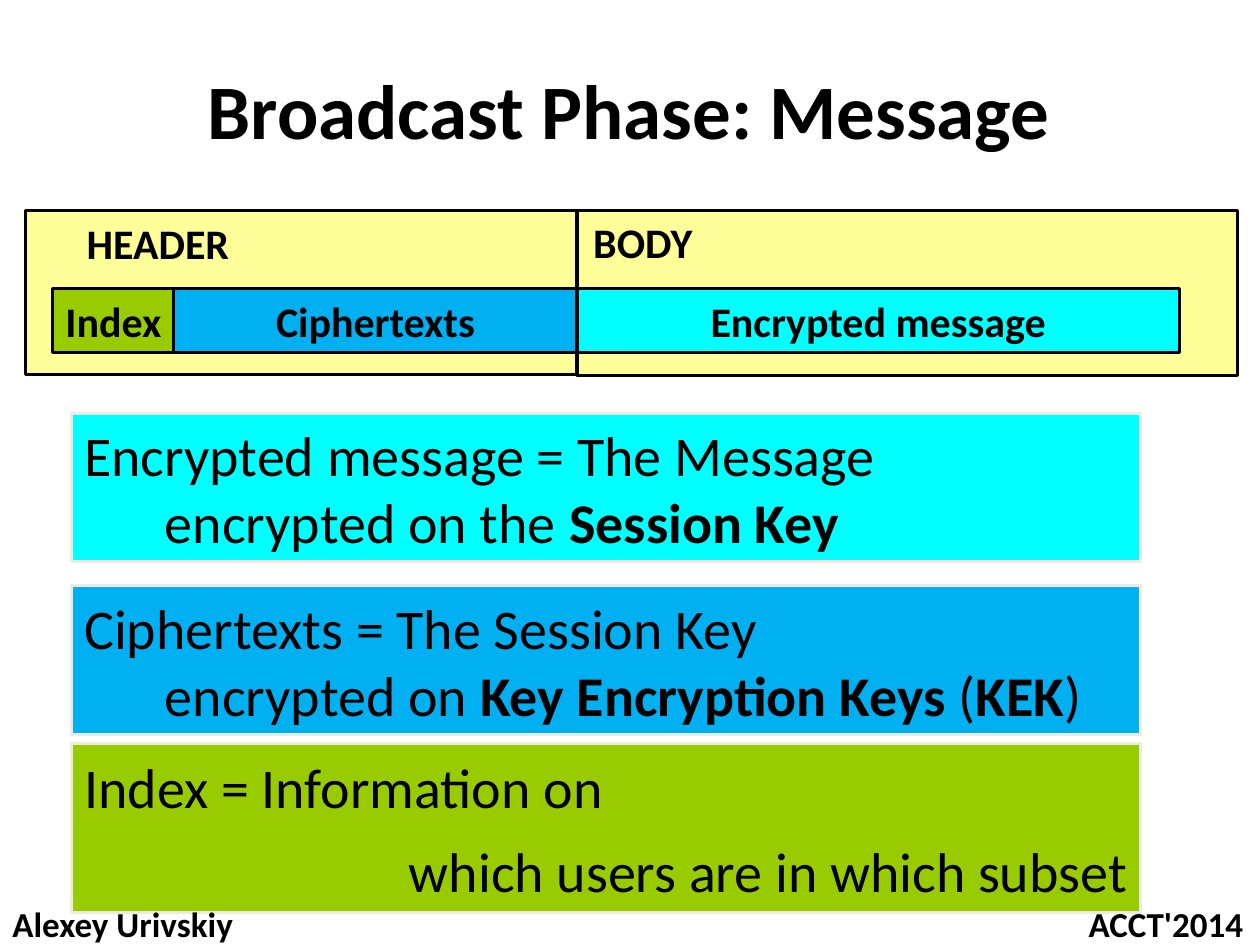
from pptx import Presentation
from pptx.dml.color import RGBColor as Rgb
from pptx.enum.shapes import MSO_SHAPE as Kind
from pptx.enum.text import MSO_ANCHOR as Anchor, MSO_AUTO_SIZE as Fit, PP_ALIGN as Align
from pptx.util import Inches as In, Pt
from lxml.etree import SubElement

HEX = {"ink": "000000", "rim": "EEECE1", "pale": "FFFF99",
       "green": "99CC00", "blue": "00B0F0", "cyan": "00FFFF"}
FONT = "Calibri"
W, H = 10, 7.5

# Content: a paragraph is a list of (text, bold) runs; "\n" breaks the line
TITLE = "Broadcast Phase: Message"
FOOT = "Alexey Urivskiy\tACCT'2014"
NOTES = [  # top, height, fill, paragraphs
    (5.9, 1.34, "green", [[("Index = Information on", False)],
                          [("which users are in which subset", False)]]),
    (4.65, 1.18, "blue", [[("Ciphertexts = The Session Key", False), ("\n", False),
                           ("encrypted on ", False), ("Key Encryption Keys ", True),
                           ("(", False), ("KEK", True), (")", False)]]),
    (3.28, 1.18, "cyan", [[("Encrypted message = The Message", False), ("\n", False),
                           ("encrypted on the ", False), ("Session Key", True)]]),
]
MID = 4.58  # where the header ends and the body starts
FRAMES = [(0.2, MID, 1.3), (MID, 9.82, 1.31)]  # left, right, height
FIELDS = [("Index", 0.42, 1.38, "green"), ("Ciphertexts", 1.38, MID, "blue"),
          ("Encrypted message", MID, 9.36, "cyan")]  # text, left, right, fill
HEADS = [("HEADER", 0.59, 1.68, 1.57), ("BODY", 4.61, 1.67, 1.28)]


def write(shape, paras, size=24, aligns=(Align.LEFT,), anchor=Anchor.TOP,
          wrap=True, hang=0, gap=0, tab=0, grow=True):
    """Fill a shape with paragraphs of (text, bold) runs."""
    frame = shape.text_frame
    frame.word_wrap = wrap
    frame.vertical_anchor = anchor
    frame.auto_size = Fit.SHAPE_TO_FIT_TEXT if grow else Fit.NONE
    for n, runs in enumerate(paras):
        para = frame.add_paragraph() if n else frame.paragraphs[0]
        para.alignment = aligns[n]
        para.space_before = Pt(gap if n else 0)
        props = para._p.get_or_add_pPr()
        if hang:
            props.set("marL", str(In(hang)))
            props.set("indent", str(-In(hang)))
        if tab:
            space = props.tag.split("}")[0] + "}"
            stops = SubElement(props, space + "tabLst")
            SubElement(stops, space + "tab", pos=str(In(tab)), algn="r")
        for text, bold in runs:
            if text == "\n":
                para.add_line_break()
                continue
            run = para.add_run()
            run.text = text
            font = run.font
            font.name, font.size, font.bold = FONT, Pt(size), bold
            font.color.rgb = Rgb.from_string(HEX["ink"])


def box(shapes, x, y, w, h, fill, line="ink"):
    shape = shapes.add_shape(Kind.RECTANGLE, In(x), In(y), In(w), In(h))
    shape.shadow.inherit = False
    shape.fill.solid()
    shape.fill.fore_color.rgb = Rgb.from_string(HEX[fill])
    shape.line.color.rgb = Rgb.from_string(HEX[line])
    shape.line.width = Pt(1.75)
    return shape


def label(shapes, x, y, w, h, text, **style):
    shape = shapes.add_textbox(In(x), In(y), In(w), In(h))
    write(shape, [[(text, True)]], **style)


def main():
    deck = Presentation()
    deck.slide_width, deck.slide_height = In(W), In(H)
    shapes = deck.slides.add_slide(deck.slide_layouts[6]).shapes

    # Title
    label(shapes, 0.36, 0.45, 9.27, 0.64, TITLE, size=44,
          aligns=[Align.CENTER], grow=False)

    # Definitions
    for top, high, fill, paras in NOTES:
        note = box(shapes, 0.57, top, 8.48, high, fill, "rim")
        write(note, paras, size=32, aligns=[Align.LEFT, Align.RIGHT],
              anchor=Anchor.MIDDLE, hang=0.64, gap=9.6)

    # Message layout
    group = shapes.add_group_shape().shapes
    for left, right, high in FRAMES:
        box(group, left, 1.67, right - left, high, "pale")
    for text, left, right, fill in FIELDS:
        field = box(group, left, 2.29, right - left, 0.51, fill)
        write(field, [[(text, True)]], aligns=[Align.CENTER],
              anchor=Anchor.MIDDLE, wrap=text != "Index")
    for text, left, top, wide in HEADS:
        label(group, left, top, wide, 0.51, text)

    # Footer: the tab stop sets the event name flush right
    label(shapes, 0, 7.13, W, 0.4, FOOT, size=20, anchor=Anchor.MIDDLE,
          tab=9.77, grow=False)

    deck.save("out.pptx")


if __name__ == "__main__":
    main()
